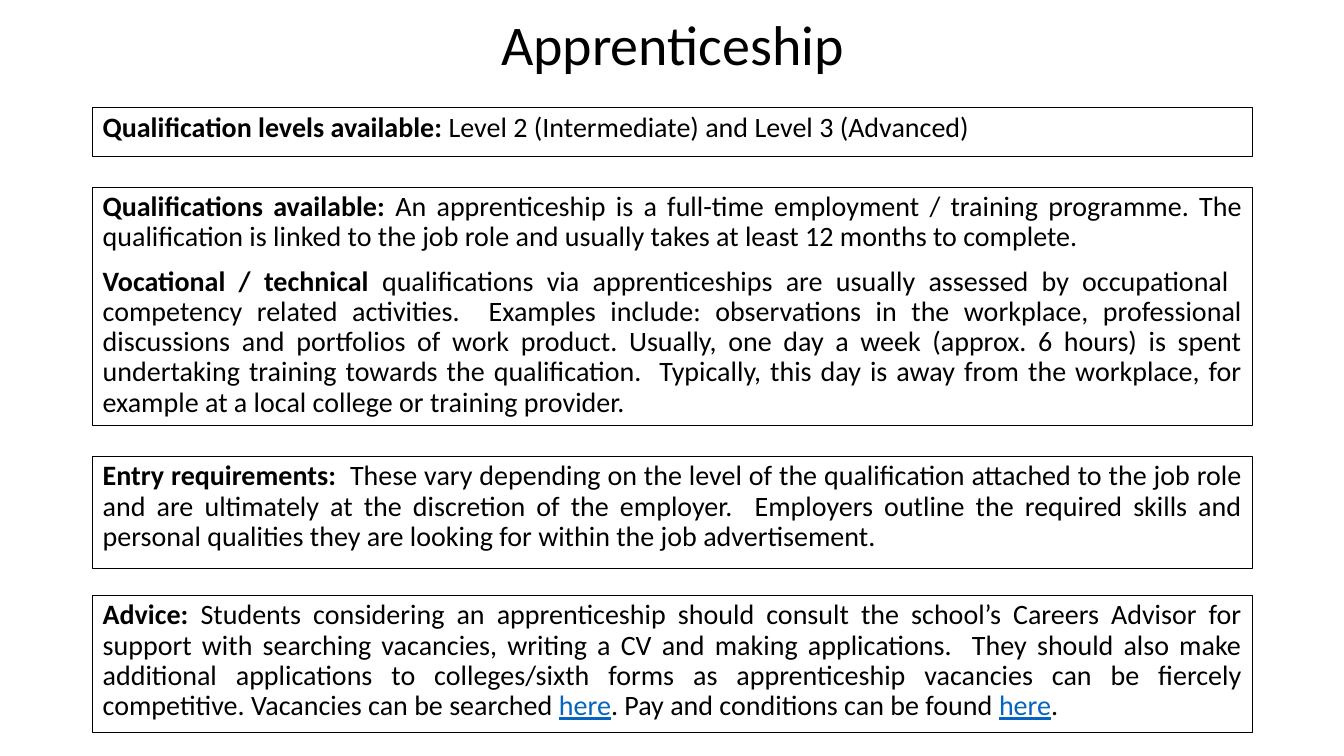
"""Build the Apprenticeship information slide."""
from pptx import Presentation
from pptx.dml.color import RGBColor
from pptx.enum.shapes import MSO_SHAPE
from pptx.enum.text import MSO_ANCHOR, PP_ALIGN
from pptx.util import Inches, Pt

RECT = MSO_SHAPE.RECTANGLE
TOP = MSO_ANCHOR.TOP
LEFT, CENTER, JUSTIFY = PP_ALIGN.LEFT, PP_ALIGN.CENTER, PP_ALIGN.JUSTIFY
BLACK = RGBColor(0x00, 0x00, 0x00)
LINK = RGBColor(0x05, 0x63, 0xC1)

LEVELS = [[
    ("Qualification levels available:", "bold"),
    (" Level 2 (Intermediate) and Level 3 (Advanced)", "plain"),
]]
QUALIFICATIONS = [
    [
        ("Qualifications available:", "bold"),
        (" An apprenticeship is a full-time employment / training programme. "
         "The qualification is linked to the job role and usually takes at "
         "least 12 months to complete.", "plain"),
    ],
    [
        ("Vocational / technical ", "bold"),
        ("qualifications via apprenticeships are usually assessed by "
         "occupational  competency related activities.  Examples include: "
         "observations in the workplace, professional discussions and "
         "portfolios of work product. Usually, one day a week (approx. 6 "
         "hours) is spent undertaking training towards the qualification.  "
         "Typically, this day is away from the workplace, for example at a "
         "local college or training provider.", "plain"),
    ],
]
ENTRY = [[
    ("Entry requirements: ", "bold"),
    (" These vary depending on the level of the qualification attached to the "
     "job role and are ultimately at the discretion of the employer.  "
     "Employers outline the required skills and personal qualities they are "
     "looking for within the job advertisement.", "plain"),
]]
ADVICE = [[
    ("Advice: ", "bold"),
    ("Students considering an apprenticeship should consult the school’s "
     "Careers Advisor for support with searching vacancies, writing a CV and "
     "making applications.  They should also make additional applications to "
     "colleges/sixth forms as apprenticeship vacancies can be fiercely "
     "competitive. Vacancies can be searched ", "plain"),
    ("here", "link"),
    (". Pay and conditions can be found ", "plain"),
    ("here", "link"),
    (".", "plain"),
]]


class InfoSlide:
    """Holds the slide and its shared text style."""

    font = "Calibri"
    left, width = Inches(0.92), Inches(11.5)

    def __init__(self, prs):
        self.s = prs.slides.add_slide(prs.slide_layouts[6])

    def add_runs(self, p, runs, size, align):
        p.alignment = align
        p.line_spacing = 0.9
        for text, style in runs:
            r = p.add_run()
            r.text = text
            r.font.name = self.font
            r.font.size = Pt(size)
            r.font.bold = style == "bold"
            r.font.underline = style == "link"
            r.font.color.rgb = LINK if style == "link" else BLACK

    def title(self, text, top, height):
        sp = self.s.shapes.add_textbox(self.left, Inches(top), self.width, Inches(height))
        tf = sp.text_frame
        tf.word_wrap = True
        tf.vertical_anchor = TOP
        tf.margin_top = Inches(0.08)
        self.add_runs(tf.paragraphs[0], [(text, "plain")], 40, CENTER)

    def box(self, paragraphs, top, height, align=JUSTIFY):
        sp = self.s.shapes.add_shape(RECT, self.left, Inches(top), self.width, Inches(height))
        sp.shadow.inherit = False
        sp.fill.background()
        sp.line.color.rgb = BLACK
        sp.line.width = Pt(0.75)
        tf = sp.text_frame
        tf.word_wrap = True
        tf.vertical_anchor = TOP
        for i, runs in enumerate(paragraphs):
            p = tf.add_paragraph() if i else tf.paragraphs[0]
            p.space_before = Pt(10)
            self.add_runs(p, runs, 20, align)


def main():
    prs = Presentation()
    prs.slide_width, prs.slide_height = Inches(13.33), Inches(7.5)
    slide = InfoSlide(prs)
    slide.title("Apprenticeship", 0.09, 1.45)
    slide.box(LEVELS, 1.07, 0.48, LEFT)
    slide.box(QUALIFICATIONS, 1.86, 2.36)
    slide.box(ENTRY, 4.53, 1.11)
    slide.box(ADVICE, 5.91, 1.36)
    prs.save("out.pptx")


if __name__ == "__main__":
    main()
